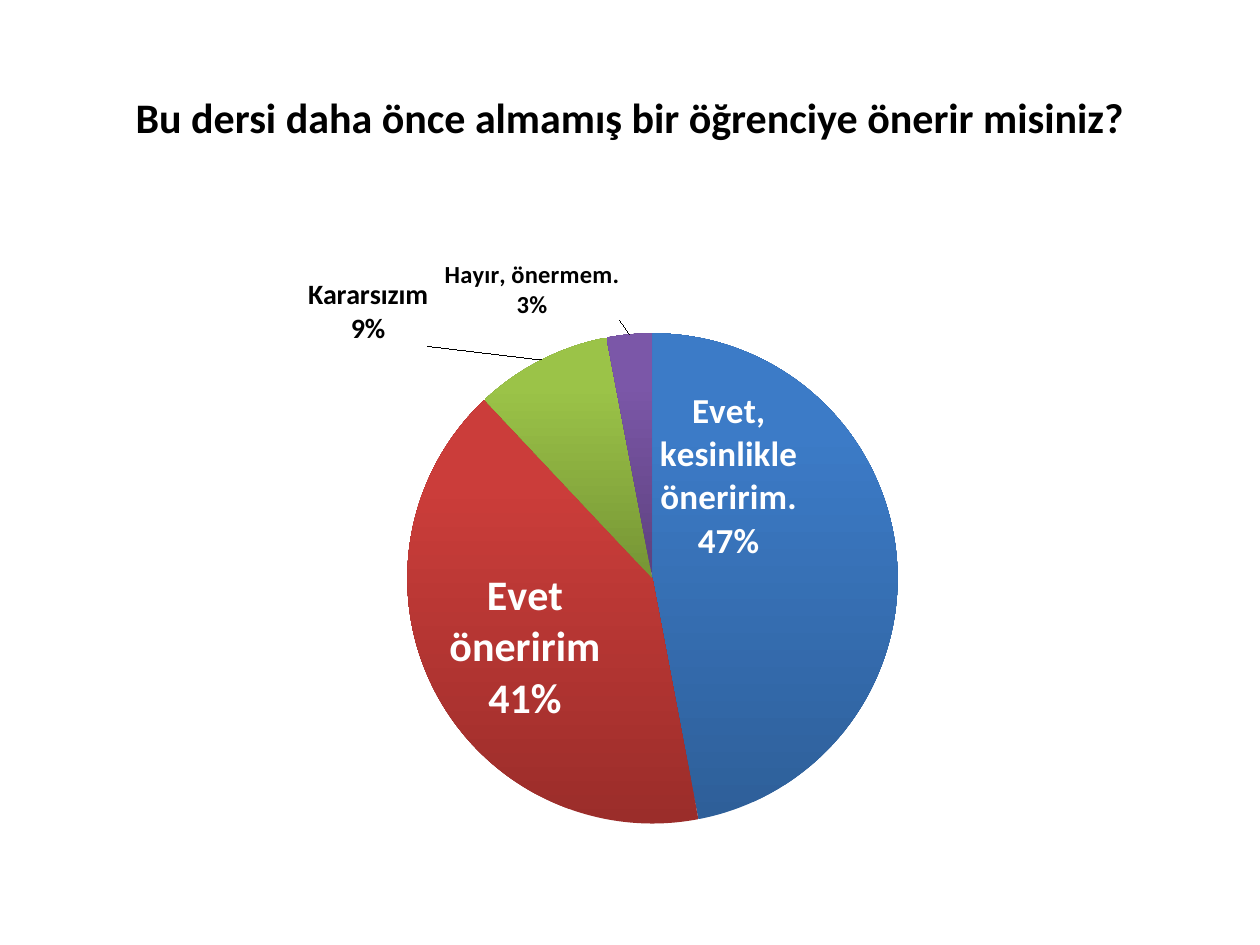
from lxml import etree
from pptx import Presentation
from pptx import util as u
from pptx.chart import data as chart_data
from pptx.dml.color import RGBColor
from pptx.enum import chart as ch
from pptx.enum import text
from pptx.oxml import ns

FONT = "Calibri"
COLORS = {
    "ink": "000000", "inverse": "FFFFFF",
    "blue": "3C7BC7", "blue_deep": "2E5F99",
    "red": "CB3D3A", "red_deep": "9B2D2A",
    "green": "9BC348", "green_deep": "769535",
    "purple": "7B57A8", "purple_deep": "5D417E",
    "cyan": "36B1D2", "cyan_deep": "2787A0",
}
INSIDE = ch.XL_LABEL_POSITION.CENTER
OUTSIDE = ch.XL_LABEL_POSITION.OUTSIDE_END
# answer, percent, slice colour, label size, label colour, label place, label shift
ANSWERS = [
    ("Evet, kesinlikle öneririm.", 47, "blue", 20, "inverse", INSIDE, (-0.05, -0.13)),
    ("Evet öneririm", 41, "red", 24, "inverse", INSIDE, (-0.02, 0.02)),
    ("Kararsızım", 9, "green", 16, "ink", OUTSIDE, (-0.12, -0.01)),
    ("Hayır, önermem.", 3, "purple", 14, "ink", OUTSIDE, (-0.01, -0.01)),
    ("Hayır, kesinlikle önermem.", 0, "cyan", 14, "ink", OUTSIDE, (0.08, -0.01)),
]


def rgb(name):
    return RGBColor.from_string(COLORS[name])


def style_font(font, size, color):
    font.name, font.size, font.bold = FONT, u.Pt(size), True
    font.color.rgb = rgb(color)


def chart_element(tag, **attributes):
    return etree.Element(ns.qn(f"c:{tag}"), attributes)


def manual_layout(**settings):
    layout = chart_element("layout")
    manual = chart_element("manualLayout")
    layout.append(manual)
    for tag, value in settings.items():
        manual.append(chart_element(tag, val=str(value)))
    return layout


def show_answer_and_percent(labels):
    """Set the shown parts on a c:dLbls or c:dLbl element."""
    for tag, shown in (("showVal", "0"), ("showCatName", "1"), ("showPercent", "1")):
        labels.find(ns.qn(f"c:{tag}")).set("val", shown)
    separator = chart_element("separator")
    separator.text = "\n"
    labels.find(ns.qn("c:showBubbleSize")).addnext(separator)


def add_question(slide, left, top, width, height):
    box = slide.shapes.add_textbox(left, top, width, height)
    frame = box.text_frame
    frame.word_wrap = True
    frame.vertical_anchor = text.MSO_ANCHOR.MIDDLE
    paragraph = frame.paragraphs[0]
    paragraph.alignment = text.PP_ALIGN.CENTER
    run = paragraph.add_run()
    run.text = "Bu dersi daha önce almamış bir öğrenciye önerir misiniz?"
    style_font(run.font, 24, "ink")


def style_slice(point, color):
    fill = point.format.fill
    fill.gradient()
    fill.gradient_angle = 90
    for stop, name, position in zip(fill.gradient_stops, (f"{color}_deep", color), (0, 0.8)):
        stop.color.rgb = rgb(name)
        stop.position = position
    point.format.line.fill.background()


def add_answer_pie(slide, left, top, width, height):
    answers = chart_data.CategoryChartData()
    answers.categories = [answer[0] for answer in ANSWERS]
    answers.add_series("Series 1", [answer[1] for answer in ANSWERS])
    pie = slide.shapes.add_chart(
        ch.XL_CHART_TYPE.PIE, left, top, width, height, answers).chart
    pie.has_title = pie.has_legend = False
    pie.font.name, pie.font.size = FONT, u.Pt(10)
    pie.font.color.rgb = rgb("ink")

    plot = pie.plots[0]
    plot.vary_by_categories = True
    plot_area = pie.element.find(".//" + ns.qn("c:plotArea"))
    for old_layout in plot_area.findall(ns.qn("c:layout")):
        plot_area.remove(old_layout)
    plot_area.insert(0, manual_layout(
        layoutTarget="inner", xMode="edge", yMode="edge", x=0.23, y=0.17, w=0.54, h=0.7))

    series = plot.series[0]
    labels = series.data_labels
    style_font(labels.font, 14, "ink")
    labels.number_format, labels.number_format_is_linked = "0%", False
    show_answer_and_percent(labels._element)

    for index, (_, _, color, size, ink, place, shift) in enumerate(ANSWERS):
        point = series.points[index]
        style_slice(point, color)
        style_font(point.data_label.font, size, ink)
        point.data_label.position = place
        label = labels._element.findall(ns.qn("c:dLbl"))[index]
        show_answer_and_percent(label)
        number_format = chart_element("numFmt", formatCode="0%", sourceLinked="0")
        label_index = label.find(ns.qn("c:idx"))
        label_index.addnext(number_format)
        label_index.addnext(manual_layout(x=shift[0], y=shift[1]))


def main():
    deck = Presentation()
    deck.slide_width, deck.slide_height = u.Cm(25.4), u.Cm(19.05)
    slide = deck.slides.add_slide(deck.slide_layouts[6])
    add_question(slide, u.Cm(1.27), u.Cm(0.76), u.Cm(22.86), u.Cm(3.18))
    add_answer_pie(slide, u.Cm(3.91), u.Cm(4.32), u.Cm(18.49), u.Cm(14.12))
    deck.save("out.pptx")


if __name__ == "__main__":
    main()
